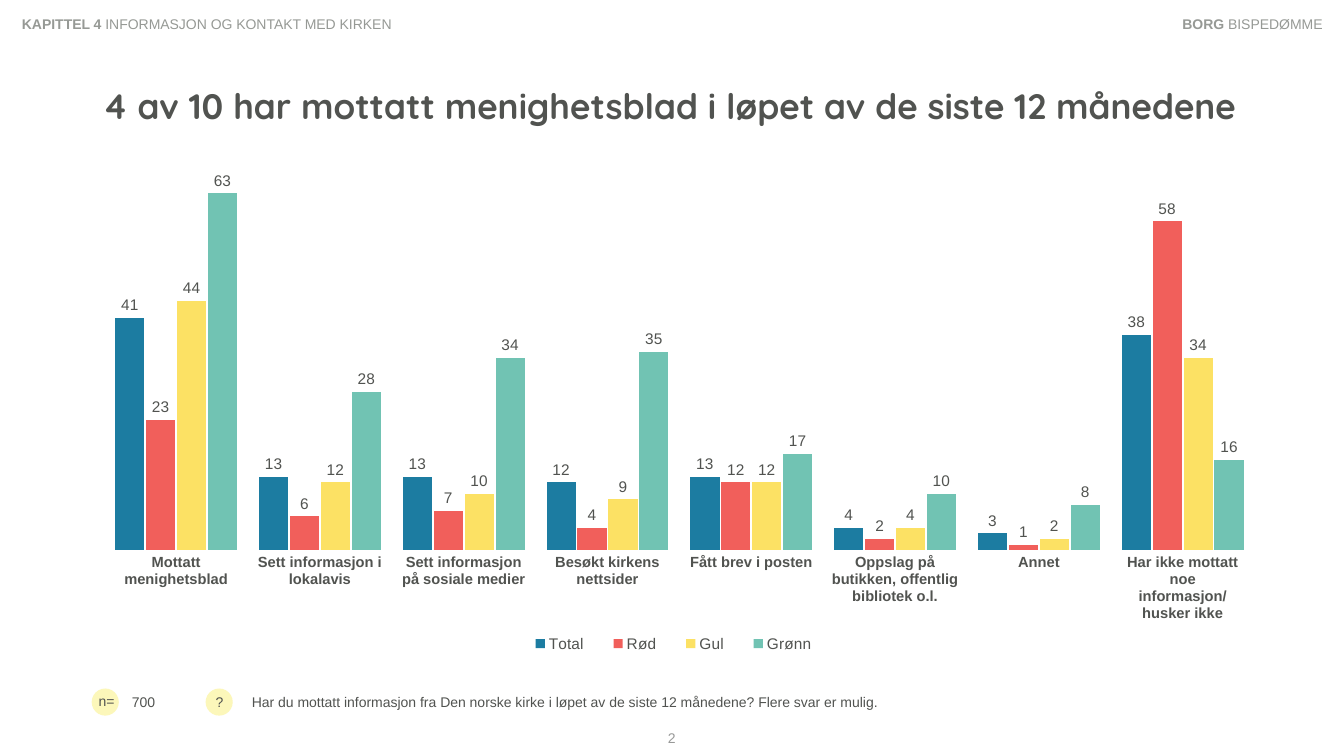
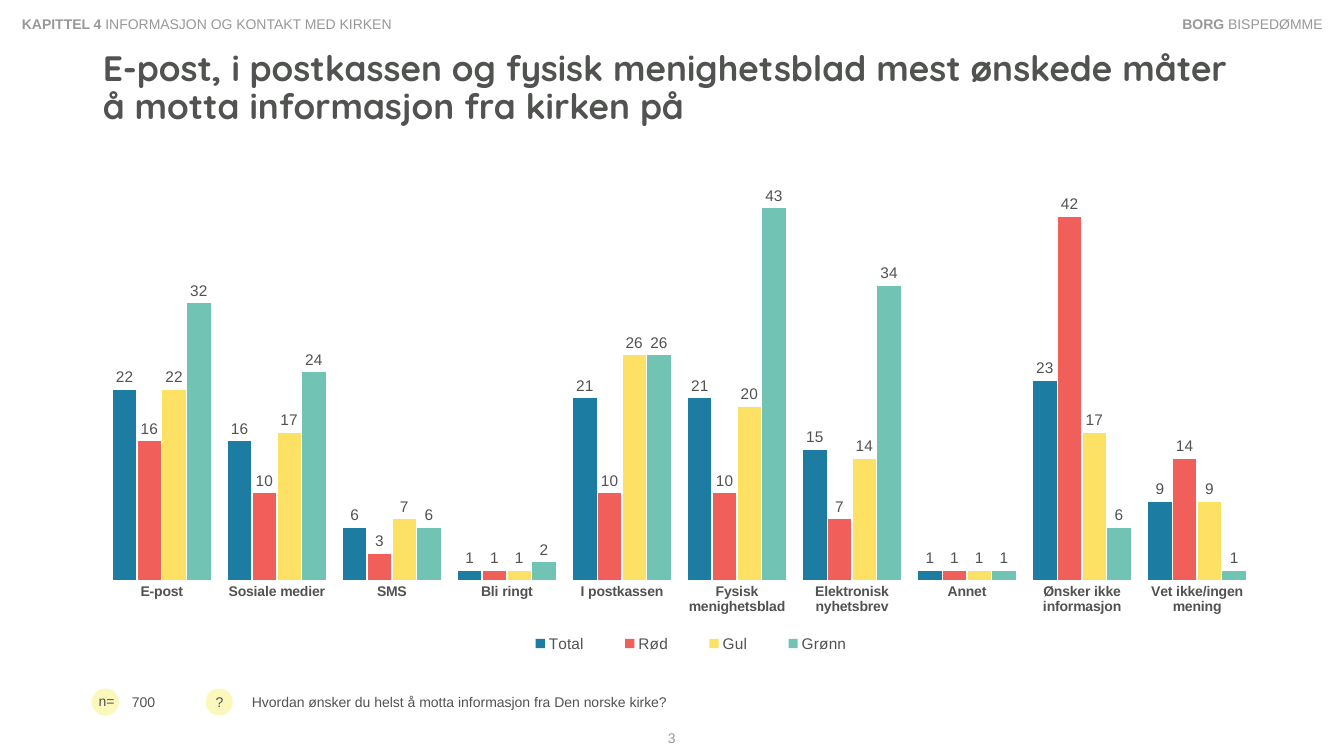
from pptx import Presentation
from pptx.util import Pt
from pptx.dml.color import RGBColor as RGB
from pptx.chart.data import CategoryChartData as Data
from pptx.enum.chart import XL_CHART_TYPE as KIND, XL_LABEL_POSITION as SPOT
from pptx.enum.chart import XL_LEGEND_POSITION as SIDE, XL_TICK_MARK as TICK
from pptx.enum.shapes import MSO_SHAPE as SHAPE
from pptx.enum.text import MSO_ANCHOR as ANCHOR, PP_ALIGN as ALIGN
from pptx.oxml import parse_xml
from pptx.oxml.ns import nsdecls, qn

HUES = {
    "text": "515350",
    "head": "969995",
    "page": "989998",
    "dot": "FCF7BA",
    "Total": "1C7CA1",
    "Rød": "F15F5B",
    "Gul": "FCE164",
    "Grønn": "71C3B3",
}
HUES = {name: RGB.from_string(code) for name, code in HUES.items()}

BODY = {"name": "Arial", "size": Pt(10), "bold": False}
TITLE = {"name": "Quicksand", "size": Pt(25.2), "bold": True}

PAGES = [
    {
        "title": "4 av 10 har mottatt menighetsblad i løpet av de siste 12 månedene",
        "ask": "Har du mottatt informasjon fra Den norske kirke i løpet av de siste 12 månedene? Flere svar er mulig.",
        "cats": [
            "Mottatt menighetsblad", "Sett informasjon i lokalavis",
            "Sett informasjon på sosiale medier", "Besøkt kirkens nettsider",
            "Fått brev i posten", "Oppslag på butikken, offentlig bibliotek o.l.",
            "Annet", "Har ikke mottatt noe informasjon/husker ikke",
        ],
        "rows": {
            "Total": [41, 13, 13, 12, 13, 4, 3, 38],
            "Rød": [23, 6, 7, 4, 12, 2, 1, 58],
            "Gul": [44, 12, 10, 9, 12, 4, 2, 34],
            "Grønn": [63, 28, 34, 35, 17, 10, 8, 16],
        },
        "top": 64,
        "size": 10.5,
        "plot": (0.01, 0.03, 0.99, 0.74),
        "key": (0.36, 0.93, 0.28, 0.06),
    },
    {
        "title": "E-post, i postkassen og fysisk menighetsblad mest ønskede måter å motta informasjon fra kirken på",
        "ask": "Hvordan ønsker du helst å motta informasjon fra Den norske kirke?",
        "cats": [
            "E-post", "Sosiale medier", "SMS", "Bli ringt", "I postkassen",
            "Fysisk menighetsblad", "Elektronisk nyhetsbrev", "Annet",
            "Ønsker ikke informasjon", "Vet ikke/ingen mening",
        ],
        "rows": {
            "Total": [22, 16, 6, 1, 21, 21, 15, 1, 23, 9],
            "Rød": [16, 10, 3, 1, 10, 10, 7, 1, 42, 14],
            "Gul": [22, 17, 7, 1, 26, 20, 14, 1, 17, 9],
            "Grønn": [32, 24, 6, 2, 26, 43, 34, 1, 6, 1],
        },
        "top": 43.3,
        "size": 10,
        "plot": (0.01, 0.07, 0.99, 0.76),
        "key": (0.35, 0.93, 0.33, 0.06),
    },
]


def write(slide, area, runs, hue="text", form=BODY, anchor=ANCHOR.TOP, align=ALIGN.LEFT, space=1):
    frame = slide.shapes.add_textbox(*map(Pt, area)).text_frame
    frame.word_wrap = True
    frame.vertical_anchor = anchor
    para = frame.paragraphs[0]
    para.alignment = align
    para.line_spacing = space
    for text, more in runs:
        run = para.add_run()
        run.text = text
        run.font.color.rgb = HUES[hue]
        for name, value in {**form, **more}.items():
            setattr(run.font, name, value)


def place(node, index, area, inner=False):
    for old in node.findall(qn("c:layout")):
        node.remove(old)
    target = '<c:layoutTarget val="inner"/>' if inner else ""
    modes = "".join(f'<c:{a}Mode val="edge"/>' for a in "xy")
    sizes = "".join(f'<c:{a} val="{v}"/>' for a, v in zip("xywh", area))
    node.insert(index, parse_xml(
        f'<c:layout {nsdecls("c")}><c:manualLayout>{target}{modes}{sizes}</c:manualLayout></c:layout>'))


deck = Presentation()
deck.slide_width, deck.slide_height = Pt(960), Pt(540)
bold = {"bold": True}

for num, page in enumerate(PAGES, 2):
    slide = deck.slides.add_slide(deck.slide_layouts[6])

    for left in (146.9, 65.5):
        dot = slide.shapes.add_shape(SHAPE.OVAL, Pt(left), Pt(491.8), Pt(19.4), Pt(19.4))
        dot.shadow.inherit = False
        dot.fill.solid()
        dot.fill.fore_color.rgb = HUES["dot"]
        dot.line.fill.background()

    write(slide, (63.4, 491, 32.4, 19.4), [("n=", {})])
    write(slide, (146.9, 491.8, 18, 19.4), [("?", {})])
    write(slide, (66.4, 28.5, 831, 66), [(page["title"], {})],
          form=TITLE, anchor=ANCHOR.BOTTOM, space=0.9)
    write(slide, (172.8, 480.2, 723.6, 41.8), [(page["ask"], {})], anchor=ANCHOR.MIDDLE)
    write(slide, (87.1, 491.8, 53.3, 19.4), [("700", {})], anchor=ANCHOR.MIDDLE)
    write(slide, (8.6, 7.2, 406, 19.4),
          [("KAPITTEL 4 ", bold), ("INFORMASJON OG KONTAKT MED KIRKEN", {})], "head")
    write(slide, (800.6, 7.2, 151.2, 19.4),
          [("BORG ", bold), ("BISPEDØMME", {})], "head", align=ALIGN.RIGHT)
    write(slide, (452.9, 514.8, 54, 25.2), [(str(num), {})], "page",
          anchor=ANCHOR.MIDDLE, align=ALIGN.CENTER)

    data = Data(number_format="0")
    data.categories = page["cats"]
    for name, vals in page["rows"].items():
        data.add_series(name, vals)
    chart = slide.shapes.add_chart(
        KIND.COLUMN_CLUSTERED, Pt(66.2), Pt(122.4), Pt(830), Pt(351.4), data).chart
    chart.has_title = False
    chart.has_legend = True
    chart.legend.position = SIDE.BOTTOM
    chart.legend.include_in_layout = False

    plot = chart.plots[0]
    plot.has_data_labels = True
    for item, form in (
        (plot, {"gap_width": 75, "overlap": -6, "vary_by_categories": False}),
        (plot.data_labels, {"show_value": True, "number_format": "0",
                            "number_format_is_linked": False, "position": SPOT.OUTSIDE_END}),
        (chart.category_axis, {"major_tick_mark": TICK.NONE, "has_major_gridlines": False}),
        (chart.value_axis, {"minimum_scale": 0, "maximum_scale": page["top"],
                            "has_major_gridlines": False, "visible": False}),
    ):
        for name, value in form.items():
            setattr(item, name, value)
    chart.category_axis.format.line.fill.background()

    for item, size, heavy in (
        (chart, 14, False),
        (chart.legend, 11, False),
        (plot.data_labels, 11, False),
        (chart.category_axis.tick_labels, page["size"], True),
    ):
        for name, value in {"name": "Arial", "size": Pt(size), "bold": heavy}.items():
            setattr(item.font, name, value)
        item.font.color.rgb = HUES["text"]

    for row in plot.series:
        row.format.fill.solid()
        row.format.fill.fore_color.rgb = HUES[row.name]

    root = chart.element if hasattr(chart, "element") else chart._chartSpace
    place(root.find(".//" + qn("c:plotArea")), 0, page["plot"], True)
    place(root.find(".//" + qn("c:legend")), 1, page["key"])

deck.save("out.pptx")
